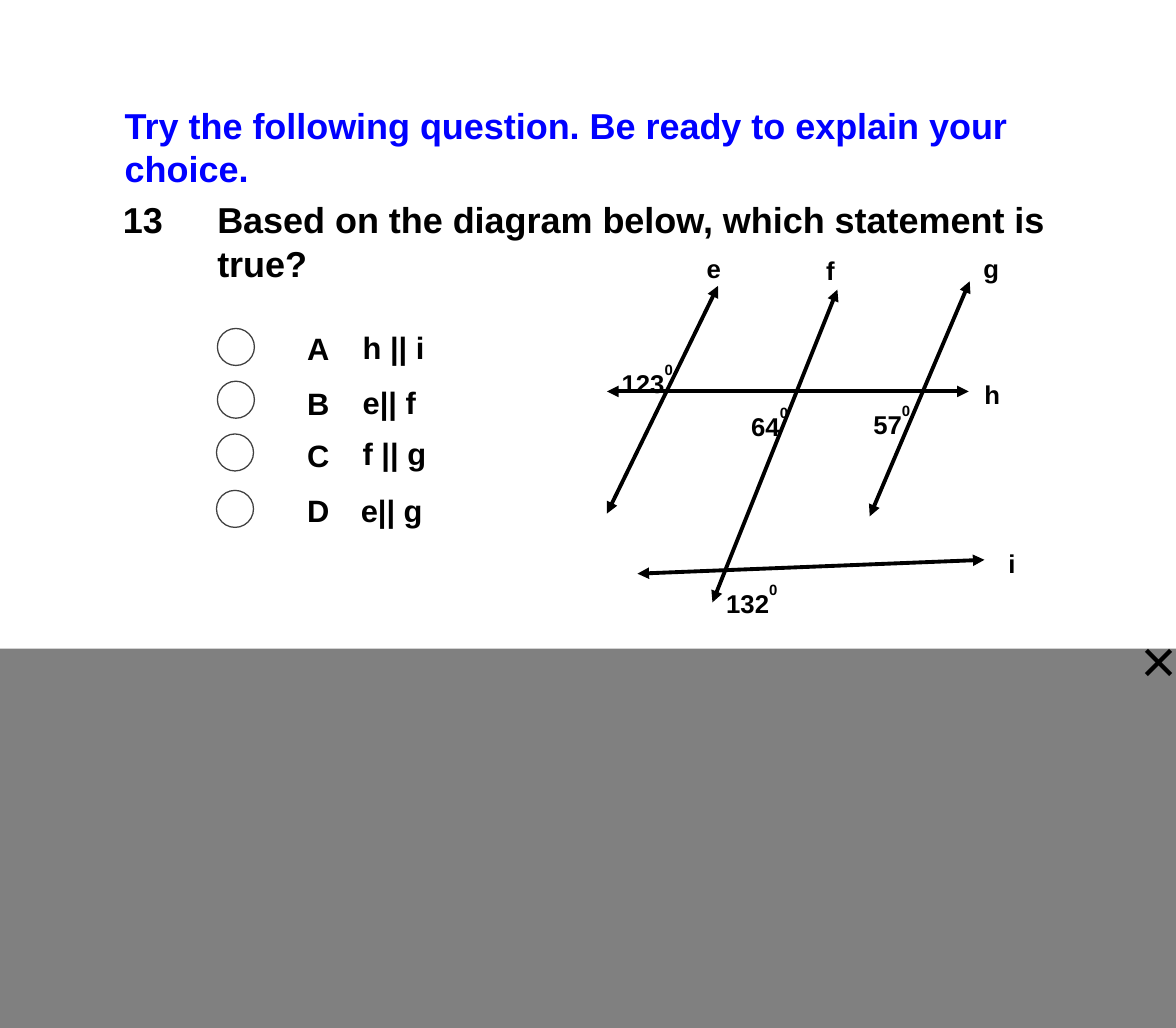
from dataclasses import dataclass
from typing import NamedTuple

from lxml.etree import SubElement
from pptx import Presentation
from pptx.dml.color import RGBColor
from pptx.enum.shapes import MSO_CONNECTOR, MSO_SHAPE
from pptx.oxml.ns import qn
from pptx.shapes.autoshape import Shape
from pptx.slide import Slide
from pptx.util import Inches, Pt


@dataclass(frozen=True)
class Theme:
    font: str = "Arial"
    black: RGBColor = RGBColor(0, 0, 0)
    blue: RGBColor = RGBColor(0, 0, 255)
    white: RGBColor = RGBColor(255, 255, 255)
    outline: RGBColor = RGBColor(64, 64, 64)
    cover: RGBColor = RGBColor(128, 128, 128)
    heading_size: int = 28
    option_size: int = 24
    label_size: int = 20
    close_size: int = 48


class Box(NamedTuple):
    left: float
    top: float
    width: float
    height: float


class Label(NamedTuple):
    text: str
    left: float
    top: float


class Line(NamedTuple):
    start: tuple[float, float]
    end: tuple[float, float]


class Option(NamedTuple):
    letter: str
    statement: str
    circle_left: float
    circle_top: float
    letter_top: float
    statement_left: float
    statement_top: float


THEME = Theme()
SLIDE_WIDTH, SLIDE_HEIGHT = 12.71, 11.11
COVER_TOP = 7.01
CIRCLE_SIZE = 0.4
LETTER_LEFT = 3.2
OPTION_MARGINS = (0.12, 0.06)

OPTIONS = [
    Option("A", "h || i", 2.35, 3.55, 3.5, 3.8, 3.49),
    Option("B", "e|| f", 2.35, 4.12, 4.1, 3.8, 4.09),
    Option("C", "f || g", 2.34, 4.69, 4.66, 3.8, 4.64),
    Option("D", "e|| g", 2.34, 5.3, 5.25, 3.78, 5.25),
]
DIAGRAM_LINES = [
    Line((6.56, 4.23), (10.47, 4.23)),
    Line((7.76, 3.09), (6.56, 5.55)),
    Line((9.05, 3.13), (7.7, 6.51)),
    Line((10.48, 3.04), (9.4, 5.58)),
    Line((6.89, 6.2), (10.64, 6.05)),
]
ANGLES = [
    Label("123", 6.62, 3.85),
    Label("64", 8.02, 4.31),
    Label("57", 9.34, 4.29),
    Label("132", 7.75, 6.23),
]
LINE_NAMES = [
    Label("e", 7.54, 2.68),
    Label("f", 8.83, 2.7),
    Label("g", 10.53, 2.68),
    Label("h", 10.54, 4.05),
    Label("i", 10.8, 5.87),
]


def add_text(slide: Slide, text: str, box: Box, size: int,
             color: RGBColor = THEME.black, bold: bool = True,
             margins: tuple[float, float] = (0.1, 0.05), superscript: str = "") -> None:
    shape = slide.shapes.add_textbox(*map(Inches, box))
    across, down = map(Inches, margins)
    frame_format = {"word_wrap": True, "margin_left": across, "margin_right": across,
                    "margin_top": down, "margin_bottom": down}
    for name, value in frame_format.items():
        setattr(shape.text_frame, name, value)
    paragraph = shape.text_frame.paragraphs[0]
    font_format = {"name": THEME.font, "size": Pt(size), "bold": bold}
    for content in filter(None, (text, superscript)):
        run = paragraph.add_run()
        run.text = content
        for name, value in font_format.items():
            setattr(run.font, name, value)
        run.font.color.rgb = color
    if superscript:
        run._r.get_or_add_rPr().set("baseline", "70000")


def add_filled_shape(slide: Slide, kind: MSO_SHAPE, box: Box, fill: RGBColor) -> Shape:
    shape = slide.shapes.add_shape(kind, *map(Inches, box))
    shape.shadow.inherit = False
    shape.fill.solid()
    shape.fill.fore_color.rgb = fill
    shape.line.fill.background()
    return shape


def add_double_arrow(slide: Slide, line: Line) -> None:
    connector = slide.shapes.add_connector(
        MSO_CONNECTOR.STRAIGHT, *map(Inches, line.start + line.end))
    connector.line.color.rgb = THEME.black
    connector.line.width = Pt(3)
    outline = connector.line._get_or_add_ln()
    for end in ("a:headEnd", "a:tailEnd"):
        SubElement(outline, qn(end), type="triangle")
    SubElement(connector._element.spPr, qn("a:effectLst"))


def add_option(slide: Slide, option: Option) -> None:
    circle = add_filled_shape(
        slide, MSO_SHAPE.OVAL,
        Box(option.circle_left, option.circle_top, CIRCLE_SIZE, CIRCLE_SIZE), THEME.white)
    circle.line.color.rgb = THEME.outline
    circle.line.width = Pt(1)
    add_text(slide, option.letter, Box(LETTER_LEFT, option.letter_top, 0.5, 0.52),
             THEME.option_size, margins=OPTION_MARGINS)
    add_text(slide, option.statement,
             Box(option.statement_left, option.statement_top, 1.1, 0.52),
             THEME.option_size, margins=OPTION_MARGINS)


def add_diagram(slide: Slide) -> None:
    for line in DIAGRAM_LINES:
        add_double_arrow(slide, line)
    for angle in ANGLES:
        add_text(slide, angle.text, Box(angle.left, angle.top, 0.92, 0.44),
                 THEME.label_size, superscript="0")
    for label in LINE_NAMES:
        add_text(slide, label.text, Box(label.left, label.top, 0.54, 0.44), THEME.label_size)


def add_answer_cover(slide: Slide) -> None:
    add_filled_shape(slide, MSO_SHAPE.RECTANGLE,
                     Box(0, COVER_TOP, SLIDE_WIDTH, SLIDE_HEIGHT - COVER_TOP), THEME.cover)
    add_text(slide, "×", Box(12.23, 6.67, 0.48, 1.24), THEME.close_size, bold=False)


def main() -> None:
    presentation = Presentation()
    presentation.slide_width = Inches(SLIDE_WIDTH)
    presentation.slide_height = Inches(SLIDE_HEIGHT)
    slide = presentation.slides.add_slide(presentation.slide_layouts[6])
    add_text(slide, "13", Box(1.23, 2.09, 0.7, 0.57), THEME.heading_size)
    add_text(slide, "Based on the diagram below, which statement is true?",
             Box(2.25, 2.09, 9.34, 1.04), THEME.heading_size)
    add_diagram(slide)
    add_text(slide, "Try the following question. Be ready to explain your choice.",
             Box(1.25, 1.07, 10.27, 1.04), THEME.heading_size, THEME.blue)
    for option in OPTIONS:
        add_option(slide, option)
    add_answer_cover(slide)
    presentation.save("out.pptx")


if __name__ == "__main__":
    main()
